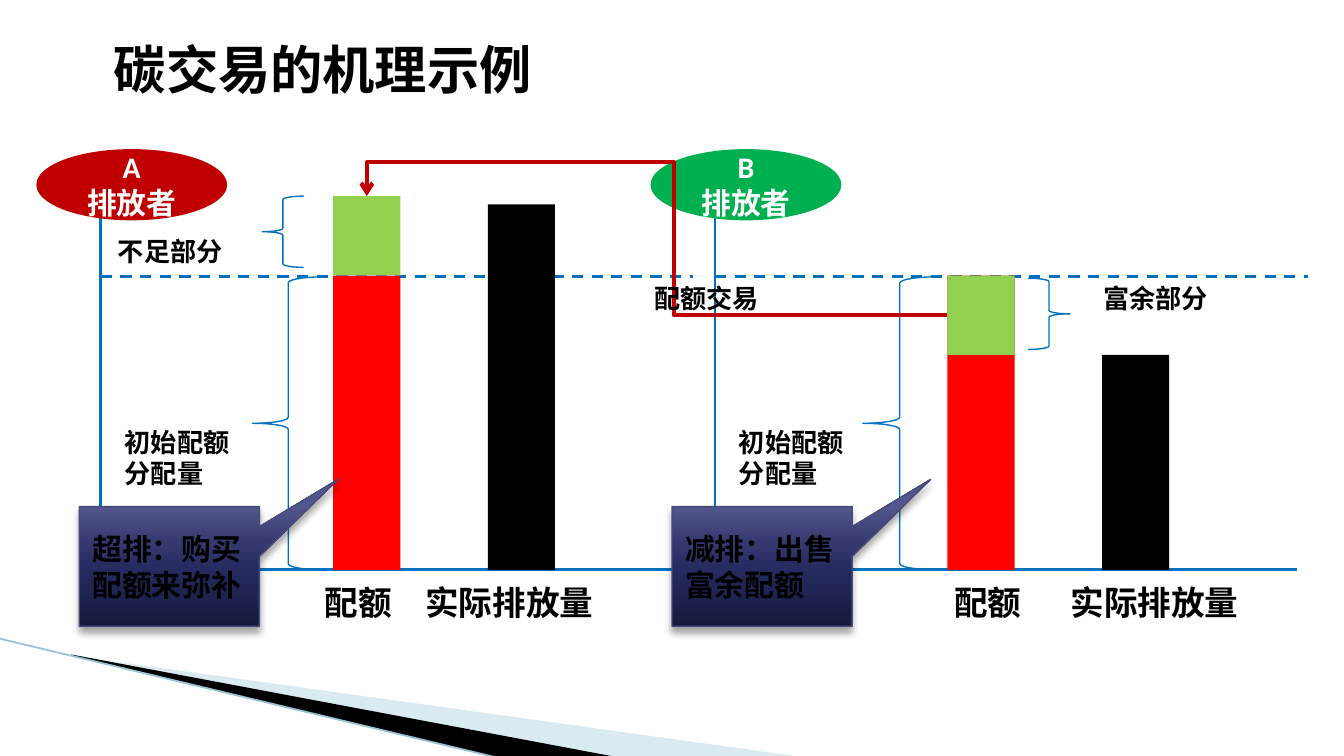
from dataclasses import dataclass

from lxml import etree
from pptx import Presentation
from pptx.dml.color import RGBColor
from pptx.enum.dml import MSO_LINE
from pptx.enum.shapes import MSO_CONNECTOR, MSO_SHAPE
from pptx.enum.text import MSO_ANCHOR, PP_ALIGN
from pptx.oxml.ns import qn
from pptx.util import Inches, Pt

STRAIGHT, ELBOW = MSO_CONNECTOR.STRAIGHT, MSO_CONNECTOR.ELBOW
RECTANGLE, OVAL = MSO_SHAPE.RECTANGLE, MSO_SHAPE.OVAL
BRACE, CALLOUT = MSO_SHAPE.LEFT_BRACE, MSO_SHAPE.RECTANGULAR_CALLOUT
LEFT, CENTER = PP_ALIGN.LEFT, PP_ALIGN.CENTER
MIDDLE = MSO_ANCHOR.MIDDLE
DASH = MSO_LINE.DASH

BLACK, WHITE, BLUE, RED = "000000", "FFFFFF", "0070C0", "FF0000"
LIGHT_GREEN, DARK_RED, GREEN = "92D050", "C00000", "00B050"
CALLOUT_STOPS = [(0, "171A3D"), (50, "262B61"), (70, "353970"), (100, "51568D")]

AXIS_TOP, QUOTA_LINE, BASELINE = 1.41, 2.06, 4.24
BAR_WIDTH, TRADED_HEIGHT = 0.5, 0.59


@dataclass
class Emitter:
    name: str
    color: str
    origin: float
    actual_top: float
    traded_top: float
    brace_left: float
    brace_width: float
    quota_label: tuple[float, float]
    actual_label: tuple[float, float]
    callout_left: float
    callout_text: str


EMITTERS = [
    Emitter("A", DARK_RED, 0.75, 1.52, 1.46, 1.88, 0.53,
            (2.19, 0.95), (2.97, 1.64), 0.59, "超排：购买配额来弥补"),
    Emitter("B", GREEN, 5.32, 2.64, 2.05, 6.42, 0.55,
            (6.88, 0.94), (7.81, 1.56), 5.0, "减排：出售富余配额"),
]

deck = Presentation()
deck.slide_width = Inches(10)
deck.slide_height = deck.slide_width * 9 // 16
page = deck.slides.add_slide(deck.slide_layouts[6])


def rgb(color: str) -> RGBColor:
    return RGBColor.from_string(color)


def write(frame, text: str, *, size=14, font="Calibri", color=BLACK, align=LEFT):
    frame.word_wrap = True
    for index, line in enumerate(text.split("\n")):
        para = frame.paragraphs[0] if index == 0 else frame.add_paragraph()
        para.alignment = align
        span = para.add_run()
        span.text = line
        span.font.size, span.font.name, span.font.bold = Pt(size), font, True
        span.font.color.rgb = rgb(color)


def add_text(text: str, left: float, top: float, width: float, height: float, **text_format):
    box = page.shapes.add_textbox(Inches(left), Inches(top), Inches(width), Inches(height))
    write(box.text_frame, text, **text_format)


def add_shape(kind, left: float, top: float, width: float, height: float,
              fill: str | None = None, line: str | None = None):
    shape = page.shapes.add_shape(kind, Inches(left), Inches(top), Inches(width), Inches(height))
    shape.shadow.inherit = False
    if fill:
        shape.fill.solid()
        shape.fill.fore_color.rgb = rgb(fill)
    else:
        shape.fill.background()
    if line:
        shape.line.color.rgb = rgb(line)
        shape.line.width = Pt(0.75)
    else:
        shape.line.fill.background()
    return shape


def add_line(start: tuple[float, float], end: tuple[float, float], *,
             color=BLUE, width=1.5, dash=None, kind=STRAIGHT):
    line = page.shapes.add_connector(kind, *map(Inches, start + end))
    line.line.color.rgb = rgb(color)
    line.line.width = Pt(width)
    if dash:
        line.line.dash_style = dash
    etree.SubElement(line._element.spPr, qn("a:effectLst"))
    return line


def add_alpha(color_node, percent: int):
    etree.SubElement(color_node, qn("a:alpha"), val=str(percent * 1000))


def add_wedge(points: list[tuple[float, float]], fill: str, alpha: int = 100):
    builder = page.shapes.build_freeform(*map(Inches, points[0]), scale=1.0)
    builder.add_line_segments([tuple(map(Inches, point)) for point in points[1:]], close=True)
    wedge = builder.convert_to_shape()
    wedge.shadow.inherit = False
    wedge.line.fill.background()
    wedge.fill.solid()
    wedge.fill.fore_color.rgb = rgb(fill)
    if alpha < 100:
        add_alpha(wedge._element.spPr.find(qn("a:solidFill"))[0], alpha)


def add_callout(text: str, left: float):
    callout = add_shape(CALLOUT, left, 3.77, 1.34, 0.89, line="474B78")
    callout.adjustments[0], callout.adjustments[1] = 0.937, -0.729
    callout.fill.gradient()
    callout.fill.gradient_angle = 90
    properties = callout._element.spPr
    stops = properties.find(qn("a:gradFill")).find(qn("a:gsLst"))
    for stop in list(stops):
        stops.remove(stop)
    for position, color in CALLOUT_STOPS:
        stop = etree.SubElement(stops, qn("a:gs"), pos=str(position * 1000))
        etree.SubElement(stop, qn("a:srgbClr"), val=color)
    shadow = etree.SubElement(
        properties.find(qn("a:effectLst")), qn("a:outerShdw"),
        blurRad=str(Pt(4)), dist=str(Pt(3)), dir="5400000", rotWithShape="0")
    add_alpha(etree.SubElement(shadow, qn("a:srgbClr"), val=BLACK), 35)
    callout.text_frame.vertical_anchor = MIDDLE
    write(callout.text_frame, text, size=16, font="Noto Sans CJK SC")


def add_emitter(emitter: Emitter):
    """Draw one emitter's panel and return its traded-quota block."""
    left = emitter.origin
    quota_left, actual_left = left + 1.73, left + 2.88
    add_line((left, AXIS_TOP), (left, BASELINE))
    add_line((left, BASELINE), (left + 4.33, BASELINE))
    add_line((left, QUOTA_LINE), (left + 4.41, QUOTA_LINE), dash=DASH)
    for bar_left, top, color in ((actual_left, emitter.actual_top, BLACK),
                                 (quota_left, QUOTA_LINE - 0.01, RED)):
        add_shape(RECTANGLE, bar_left, top, BAR_WIDTH, BASELINE - top, color)
    traded = add_shape(RECTANGLE, quota_left, emitter.traded_top,
                       BAR_WIDTH, TRADED_HEIGHT, LIGHT_GREEN)
    add_shape(BRACE, emitter.brace_left, QUOTA_LINE, emitter.brace_width,
              BASELINE - QUOTA_LINE, line=BLUE)
    add_text("初始配额分配量", left + 0.08, 3.12, 1.1, 0.57)
    badge = add_shape(OVAL, left - 0.48, 1.11, 1.42, 0.53, emitter.color)
    badge.text_frame.vertical_anchor = MIDDLE
    write(badge.text_frame, f"{emitter.name}\n排放者", size=16, color=WHITE, align=CENTER)
    for text, (label_left, width) in (("配额", emitter.quota_label),
                                      ("实际排放量", emitter.actual_label)):
        add_text(text, label_left, 4.28, width, 0.4, size=18, align=CENTER)
    add_callout(emitter.callout_text, emitter.callout_left)
    return traded


def add_trade_arrow(seller, buyer):
    """Route an elbow arrow from the seller's surplus to the top of the buyer's shortfall."""
    arrow = add_line((7.05, 2.34), (2.73, 1.46), color=DARK_RED, width=2.25, kind=ELBOW)
    arrow.begin_connect(seller, 1)
    arrow.end_connect(buyer, 0)
    geometry = arrow._element.spPr.find(qn("a:prstGeom"))
    geometry.set("prst", "bentConnector4")
    guides = geometry.find(qn("a:avLst"))
    for name, value in (("adj1", 47100), ("adj2", 128400)):
        etree.SubElement(guides, qn("a:gd"), name=name, fmla=f"val {value}")
    etree.SubElement(arrow.line._get_or_add_ln(), qn("a:tailEnd"), type="arrow")


add_wedge([(0.55, 4.88), (5.95, 5.63), (4.56, 5.63)], "A0CBDC", 40)
add_wedge([(0.53, 4.87), (4.57, 5.63), (3.72, 5.64), (0.54, 4.88)], BLACK)
add_line((-0.01, 4.75), (3.71, 5.64), color="97C5D8", width=0.95)

shortfall, surplus = [add_emitter(emitter) for emitter in EMITTERS]

add_shape(BRACE, 1.95, 1.46, 0.31, 0.53, line=BLUE)
add_text("不足部分", 0.78, 1.7, 1.1, 0.34)
surplus_brace = add_shape(BRACE, 7.65, 2.07, 0.31, 0.53, line=BLUE)
surplus_brace.rotation = 180
add_text("富余部分", 8.05, 2.05, 1.1, 0.34, align=CENTER)
add_trade_arrow(surplus, shortfall)
add_text("配额交易", 4.77, 2.05, 1.1, 0.34)
add_text("碳交易的机理示例", 0.75, 0.23, 3.86, 0.57, size=28, font="Arial")

deck.save("out.pptx")
